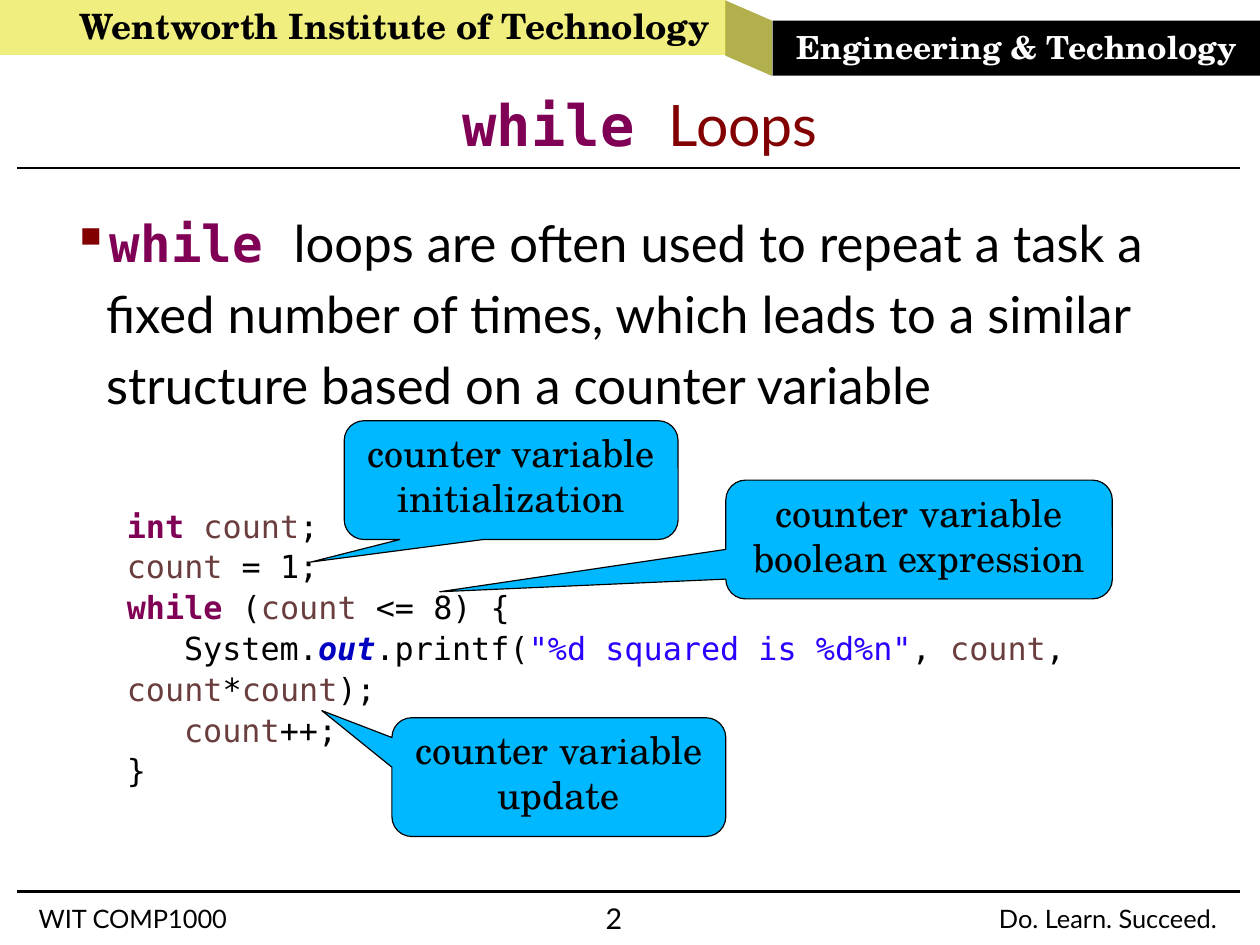
from lxml import etree
from pptx import Presentation
from pptx import util as u
from pptx.dml.color import RGBColor
from pptx.enum import shapes, text
from pptx.oxml.ns import qn

BLACK, WHITE, KEYWORD, VARIABLE, STRING = "000000", "FFFFFF", "7F0055", "6A3E3E", "2A00FF"
FIELD, MAROON, CALLOUT_BLUE = "0000C0", "820000", "00B8FF"
SANS, SERIF, MONO = "Lato", "TeX Gyre Schola", "DejaVu Sans Mono"
LEFT, CENTER = text.PP_ALIGN.LEFT, text.PP_ALIGN.CENTER
TOP, MIDDLE = text.MSO_ANCHOR.TOP, text.MSO_ANCHOR.MIDDLE


def rgb(value):
    return RGBColor.from_string(value)


def add_element(parent, tag, **attributes):
    return etree.SubElement(parent, qn(tag), attributes)


class SlideBuilder:
    def __init__(self, width, height):
        self.presentation = Presentation()
        self.presentation.slide_width = u.Cm(width)
        self.presentation.slide_height = u.Cm(height)
        self.slide = self.presentation.slides.add_slide(self.presentation.slide_layouts[6])

    def style_font(self, font, name=None, size=None, color=None, bold=None, italic=None):
        if name:
            font.name = name
        if size:
            font.size = u.Pt(size)
        if color:
            font.color.rgb = rgb(color)
        font.bold, font.italic = bold, italic

    def set_frame(self, shape, anchor, margins=None):
        """Margins are left, top, right, bottom in cm."""
        frame = shape.text_frame
        frame.word_wrap = True
        frame.vertical_anchor = anchor
        if margins:
            (frame.margin_left, frame.margin_top,
             frame.margin_right, frame.margin_bottom) = map(u.Cm, margins)
        return frame

    def fill_paragraph(self, paragraph, runs, spacing, align=LEFT, **font):
        """Runs are (text, style) pairs; font holds what all runs share."""
        paragraph.alignment = align
        paragraph.line_spacing = spacing
        self.style_font(paragraph.font, **font)
        for words, style in runs:
            run = paragraph.add_run()
            run.text = words
            if style:
                self.style_font(run.font, **style)

    def rule(self, y):
        line = self.slide.shapes.add_connector(
            shapes.MSO_CONNECTOR.STRAIGHT, u.Cm(0.38), u.Cm(y), u.Cm(27.56), u.Cm(y))
        line.line.color.rgb = rgb(BLACK)
        line.line.width = u.Pt(1.5)
        add_element(line._element.spPr, "a:effectLst")

    def text_box(self, box, margins=None, anchor=TOP):
        shape = self.slide.shapes.add_textbox(*map(u.Cm, box))
        return self.set_frame(shape, anchor, margins)

    def footer(self, words, box, size):
        frame = self.text_box(box, (0, 0.05, 0, 0))
        self.fill_paragraph(frame.paragraphs[0], [(words, None)], 0.93,
                            name=SANS, size=size, color=BLACK)

    def preset(self, kind, box, fill, opacity=100):
        shape = self.slide.shapes.add_shape(kind, *map(u.Cm, box))
        shape.shadow.inherit = False
        shape.fill.solid()
        shape.fill.fore_color.rgb = rgb(fill)
        shape.line.fill.background()
        if opacity < 100:
            color = shape._element.spPr.find(qn("a:solidFill"))[0]
            add_element(color, "a:alpha", val=str(opacity * 1000))
        return shape

    def banner(self, words, box, fill, color, size, align, left_margin=0.25, opacity=100):
        shape = self.preset(shapes.MSO_SHAPE.RECTANGLE, box, fill, opacity)
        frame = self.set_frame(shape, MIDDLE, (left_margin, 0.13, 0.25, 0.13))
        self.fill_paragraph(frame.paragraphs[0], [(words, None)], 0.98, align,
                            name=SERIF, size=size, color=color, bold=True)

    def fold(self, box):
        """The slanted side that joins the two banners."""
        shape = self.preset(shapes.MSO_SHAPE.PARALLELOGRAM, box, "928F00", 70)
        shape.adjustments[0] = 0.434
        shape.rotation = 90

    def callout(self, words, left, top, width, pointer):
        shape = self.preset(shapes.MSO_SHAPE.ROUNDED_RECTANGULAR_CALLOUT,
                            (left, top, width, 2.64), CALLOUT_BLUE)
        shape.line.color.rgb = rgb(BLACK)
        shape.line.width = u.Pt(0.75)
        shape.adjustments[0], shape.adjustments[1] = pointer
        frame = self.set_frame(shape, TOP)
        self.fill_paragraph(frame.paragraphs[0], [(words, None)], 0.98, CENTER,
                            name=SERIF, size=24, color=BLACK)

    def heading(self, runs, box):
        frame = self.text_box(box, (0, 0, 0, 0), MIDDLE)
        self.fill_paragraph(frame.paragraphs[0], runs, 1.17, CENTER, size=36)

    def bullet(self, runs, box):
        paragraph = self.text_box(box, (0, 0, 0, 0)).paragraphs[0]
        properties = paragraph._p.get_or_add_pPr()
        properties.set("marL", str(u.Cm(1.27)))
        properties.set("indent", str(u.Cm(-0.76)))
        add_element(add_element(properties, "a:buClr"), "a:srgbClr", val=MAROON)
        add_element(properties, "a:buChar", char="▪")
        self.fill_paragraph(paragraph, runs, 1.17, size=32)

    def code(self, lines, box):
        frame = self.text_box(box)
        for index, runs in enumerate(lines):
            paragraph = frame.add_paragraph() if index else frame.paragraphs[0]
            tabs = add_element(paragraph._p.get_or_add_pPr(), "a:tabLst")
            add_element(tabs, "a:tab", pos=str(u.Cm(1.27)), algn="l")
            self.fill_paragraph(paragraph, runs, 1.07, name=MONO, size=20)


def main():
    builder = SlideBuilder(28, 21)
    builder.rule(19.81)
    builder.footer("WIT COMP1000", (0.86, 20.07, 4.9, 0.71), 16)
    builder.footer("2", (13.46, 20.04, 1.02, 0.71), 18)
    builder.footer("Do. Learn. Succeed.", (22.2, 20.07, 5.33, 0.71), 16)
    builder.banner("Wentworth Institute of Technology", (0, 0, 16.13, 1.22),
                   "E3DE00", BLACK, 22, LEFT, left_margin=1.77, opacity=50)
    builder.fold((15.8, 0.33, 1.68, 1.04))
    builder.banner("Engineering & Technology", (17.17, 0.46, 10.85, 1.22),
                   BLACK, WHITE, 20, CENTER)
    builder.rule(3.73)

    plain, variable, literal = ({"color": color} for color in (BLACK, VARIABLE, STRING))
    keyword = {"color": KEYWORD, "bold": True}
    field = {"color": FIELD, "bold": True, "italic": True}
    count = ("count", variable)
    builder.code([
        [("int ", keyword), count, (";", plain)],
        [count, (" = 1;", plain)],
        [("while ", keyword), ("(", plain), count, (" <= 8) {", plain)],
        [("\tSystem.", plain), ("out", field), (".printf(", plain),
         ('"%d squared is %d%n"', literal), (", ", plain), count, (", ", plain),
         count, ("*", plain), count, (");", plain)],
        [("\tcount", variable), ("++;", plain)],
        [("}", plain)],
    ], (2.57, 11.07, 25.2, 6.65))

    while_word = ("while ", {"name": MONO, **keyword})
    builder.heading([while_word, ("Loops", {"name": SANS, "color": MAROON})],
                    (3.43, 0.86, 21.59, 3.51))
    builder.bullet([while_word, (
        "loops are often used to repeat a task a fixed number of times, "
        "which leads to a similar structure based on a counter variable",
        {"name": SANS, "color": BLACK})], (1.09, 4.47, 25.6, 5.82))

    for words, left, top, width, pointer in (
            ("counter variable initialization", 7.65, 9.35, 7.42, (-0.6, 0.69)),
            ("counter variable boolean expression", 16.13, 10.67, 8.59, (-1.24, 0.44)),
            ("counter variable update", 8.71, 15.95, 7.42, (-0.71, -0.56))):
        builder.callout(words, left, top, width, pointer)
    builder.presentation.save("out.pptx")


if __name__ == "__main__":
    main()
